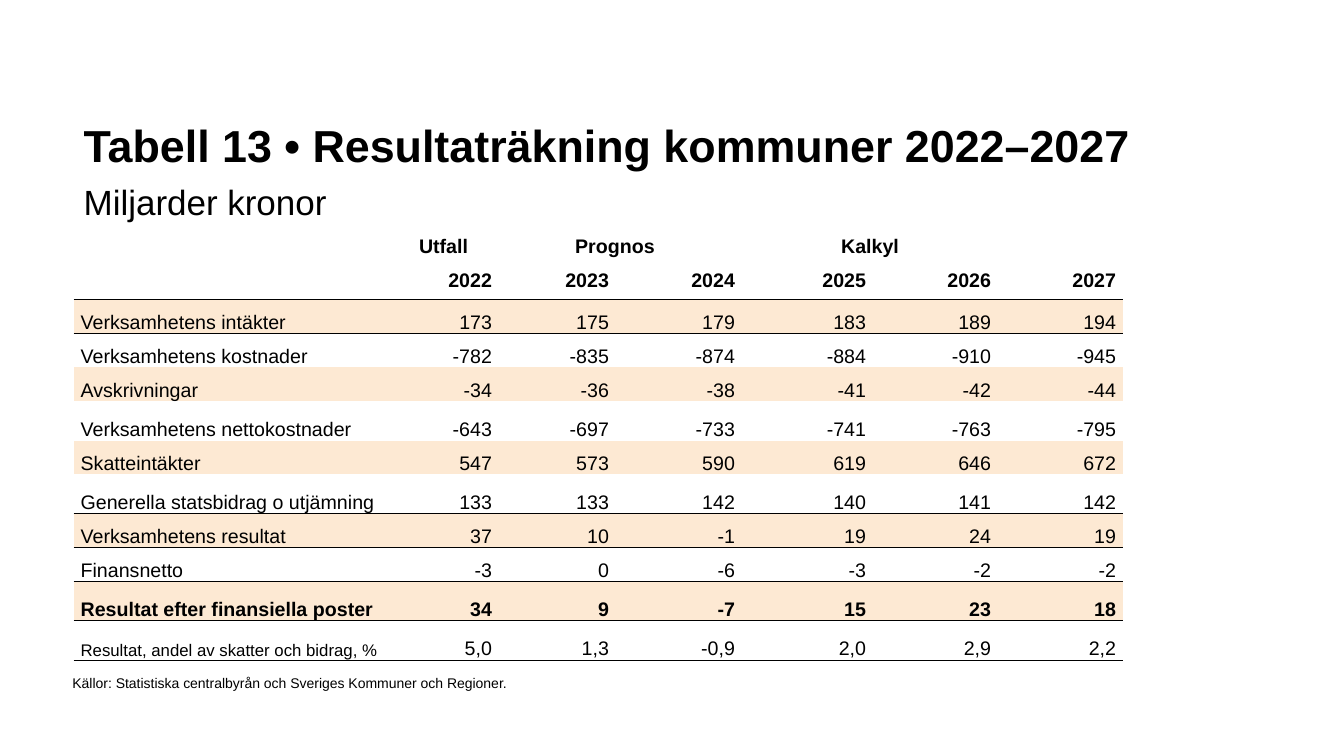
from lxml import etree
from pptx import Presentation
from pptx.dml.color import RGBColor
from pptx.enum import text
from pptx.oxml import ns
from pptx.util import Inches, Pt

# Content
TITLE = "Tabell 13 • Resultaträkning kommuner 2022–2027"
SUBTITLE = "Miljarder kronor"
SOURCE = "Källor: Statistiska centralbyrån och Sveriges Kommuner och Regioner."
ROWS = [
    ("", "Utfall", "Prognos", "", "Kalkyl", "", ""),
    ("", "2022", "2023", "2024", "2025", "2026", "2027"),
    ("Verksamhetens intäkter", "173", "175", "179", "183", "189", "194"),
    ("Verksamhetens kostnader", "-782", "-835", "-874", "-884", "-910", "-945"),
    ("Avskrivningar", "-34", "-36", "-38", "-41", "-42", "-44"),
    ("Verksamhetens nettokostnader", "-643", "-697", "-733", "-741", "-763", "-795"),
    ("Skatteintäkter", "547", "573", "590", "619", "646", "672"),
    ("Generella statsbidrag o utjämning", "133", "133", "142", "140", "141", "142"),
    ("Verksamhetens resultat", "37", "10", "-1", "19", "24", "19"),
    ("Finansnetto", "-3", "0", "-6", "-3", "-2", "-2"),
    ("Resultat efter finansiella poster", "34", "9", "-7", "15", "23", "18"),
    ("Resultat, andel av skatter och bidrag, %", "5,0", "1,3", "-0,9", "2,0", "2,9", "2,2"),
]

# Table layout
FONT = "Arial"
BLACK = RGBColor(0x00, 0x00, 0x00)
BAND = RGBColor(0xFD, 0xE9, 0xD3)
COLUMN_WIDTHS = (3.12, 1.1, 1.16, 1.25, 1.3, 1.24, 1.24)
TABLE_HEIGHT = 4.25
TALL_ROWS, TALL_HEIGHT = {5, 7, 10, 11}, 0.39
SHORT_HEIGHT = (TABLE_HEIGHT - len(TALL_ROWS) * TALL_HEIGHT) / (len(ROWS) - len(TALL_ROWS))
BOLD_ROWS = {0, 1, 10}
RULED_ROWS = {1, 7, 8, 9, 10, 11}  # rows with a line below
NO_STYLE = "{2D5ABB26-0587-4C30-8999-92F81FD0307C}"


def format_runs(paragraph, size, bold=False):
    for run in paragraph.runs:
        run.font.name = FONT
        run.font.size = Pt(size)
        run.font.bold = bold
        run.font.color.rgb = BLACK


def add_border(cell, side):
    properties = cell._tc.get_or_add_tcPr()
    line = etree.Element(ns.qn(f"a:{side}"), w=str(Pt(1)))
    fill = etree.SubElement(line, ns.qn("a:solidFill"))
    etree.SubElement(fill, ns.qn("a:srgbClr"), val=str(BLACK))
    properties.append(line)


def fill_cell(cell, row, column):
    # Borders come before the fill in the cell properties
    if row - 1 in RULED_ROWS:
        add_border(cell, "lnT")
    if row in RULED_ROWS:
        add_border(cell, "lnB")
    if row >= 2 and row % 2 == 0:
        cell.fill.solid()
        cell.fill.fore_color.rgb = BAND
    else:
        cell.fill.background()

    cell.margin_left = cell.margin_right = Inches(0.07)
    cell.margin_top = cell.margin_bottom = 0
    cell.vertical_anchor = text.MSO_ANCHOR.MIDDLE if row < 2 else text.MSO_ANCHOR.BOTTOM
    if not ROWS[row][column]:
        return
    cell.text_frame.text = ROWS[row][column]
    paragraph = cell.text_frame.paragraphs[0]
    if row == 0:
        paragraph.alignment = text.PP_ALIGN.CENTER
    else:
        paragraph.alignment = text.PP_ALIGN.RIGHT if column else text.PP_ALIGN.LEFT
    paragraph.line_spacing = Pt(13)
    paragraph.space_after = Pt(1)
    small = row == len(ROWS) - 1 and column == 0
    format_runs(paragraph, 12 if small else 14, row in BOLD_ROWS)


def main():
    presentation = Presentation()
    presentation.slide_width, presentation.slide_height = Inches(13.33), Inches(7.5)
    slide = presentation.slides.add_slide(presentation.slide_layouts[5])

    # Title with subtitle on a second line
    title = slide.shapes.title
    title.left, title.top = Inches(0.73), Inches(0.96)
    title.width, title.height = Inches(11.05), Inches(1.35)
    frame = title.text_frame
    frame.text = f"{TITLE}\v{SUBTITLE}"
    frame.auto_size = text.MSO_AUTO_SIZE.NONE
    frame.vertical_anchor = text.MSO_ANCHOR.MIDDLE
    paragraph = frame.paragraphs[0]
    paragraph.alignment = text.PP_ALIGN.LEFT
    paragraph.line_spacing = 1.2
    paragraph.space_after = Pt(4)
    format_runs(paragraph, 32, True)
    paragraph.runs[1].font.size = Pt(25)
    paragraph.runs[1].font.bold = False

    # Income statement table
    table = slide.shapes.add_table(
        len(ROWS), len(COLUMN_WIDTHS), Inches(0.73), Inches(2.3),
        Inches(sum(COLUMN_WIDTHS)), Inches(TABLE_HEIGHT)).table
    table.first_row = table.horz_banding = False
    table._tbl.tblPr.find(ns.qn("a:tableStyleId")).text = NO_STYLE
    for column, width in zip(table.columns, COLUMN_WIDTHS):
        column.width = Inches(width)
    for row_index, row in enumerate(table.rows):
        row.height = Inches(TALL_HEIGHT if row_index in TALL_ROWS else SHORT_HEIGHT)
        for column_index, cell in enumerate(row.cells):
            fill_cell(cell, row_index, column_index)
    for first in (2, 4):
        table.cell(0, first).merge(table.cell(0, first + 1))
    table.cell(0, 2).margin_right = Inches(0.18)  # sets Prognos slightly left of centre

    # Source line
    source = slide.shapes.add_textbox(Inches(0.62), Inches(6.64), Inches(6.67), Inches(0.27))
    source.text_frame.word_wrap = True
    source.text_frame.text = SOURCE
    format_runs(source.text_frame.paragraphs[0], 10)

    presentation.save("out.pptx")


if __name__ == "__main__":
    main()
